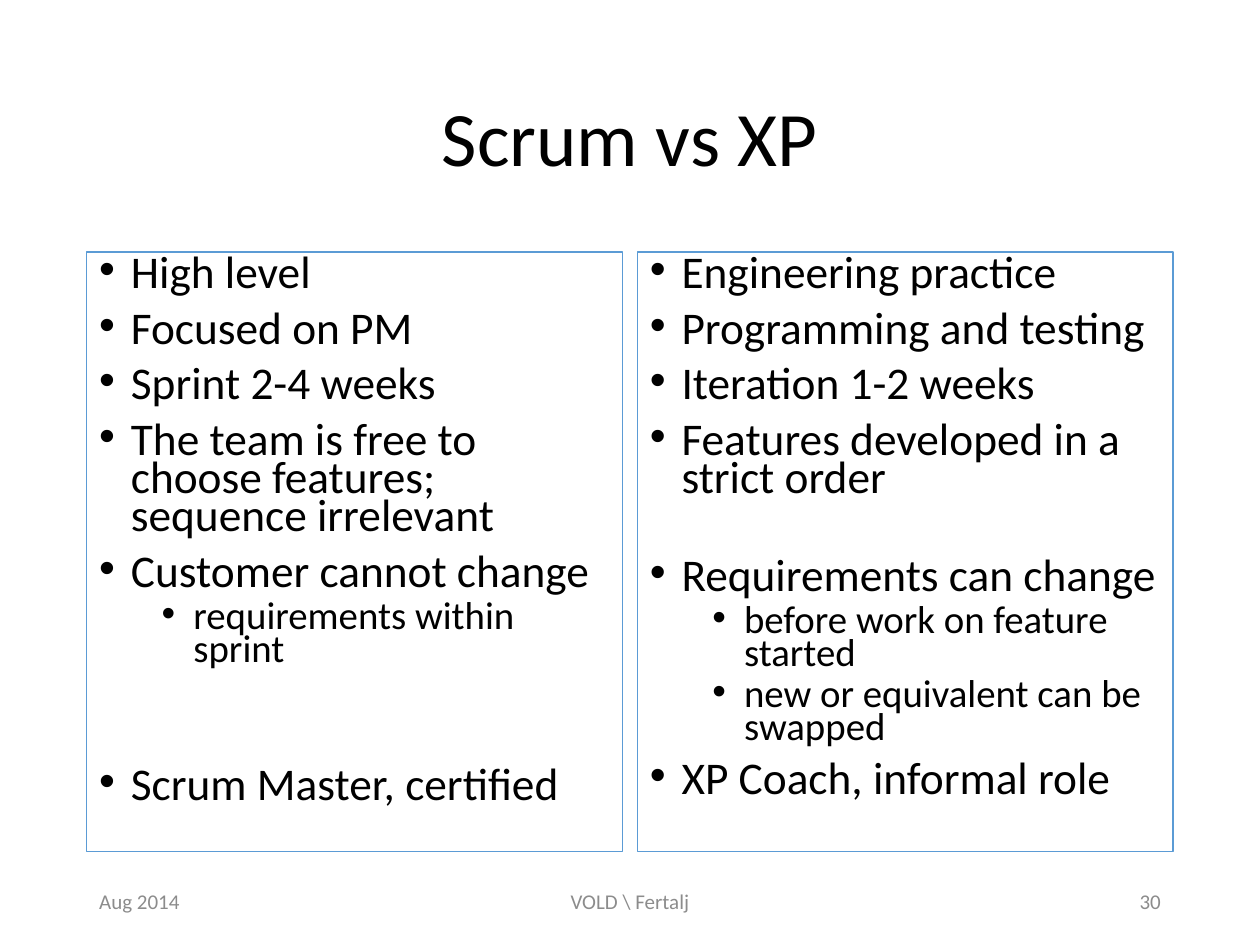
from dataclasses import dataclass

from lxml import etree
from pptx import Presentation
from pptx import util as u
from pptx.dml.color import RGBColor
from pptx.enum import shapes, text
from pptx.oxml import ns


@dataclass(frozen=True)
class Theme:
    font: str = "Calibri"
    ink: str = "000000"
    muted: str = "8C8C8C"
    border: str = "5B9BD5"
    title_size: float = 44
    footer_size: float = 12
    level_sizes: tuple = (25.9, 22.2)
    level_gaps: tuple = (10, 5)
    level_indents: tuple = (0.64, 1.9)
    hanging: float = 0.64


THEME = Theme()
LEFT, WIDTH = 1.75, 21.9
GUTTER = 0.3

# Each entry: level, wording, extra space above in points
SCRUM = [
    (0, "High level", 0),
    (0, "Focused on PM", 0),
    (0, "Sprint 2-4 weeks", 0),
    (0, "The team is free to choose features; sequence irrelevant", 0),
    (0, "Customer cannot change", 0),
    (1, "requirements within sprint", 0),
    (0, "Scrum Master, certified", 48),
]
XP = [
    (0, "Engineering practice", 0),
    (0, "Programming and testing", 0),
    (0, "Iteration 1-2 weeks", 0),
    (0, "Features developed in a strict order", 0),
    (0, "Requirements can change", 24),
    (1, "before work on feature started", 0),
    (1, "new or equivalent can be swapped", 0),
    (0, "XP Coach, informal role", 0),
]


def apply(target, formats):
    for name, value in formats.items():
        setattr(target, name, value)


def write(paragraph, wording, size, color, **formats):
    apply(paragraph, formats)
    run = paragraph.add_run()
    run.text = wording
    apply(run.font, {"name": THEME.font, "size": u.Pt(size)})
    run.font.color.rgb = RGBColor.from_string(color)


def add_bullet(paragraph, level):
    props = paragraph._p.get_or_add_pPr()
    props.set("marL", str(u.Cm(THEME.level_indents[level])))
    props.set("indent", str(-u.Cm(THEME.hanging)))
    font = etree.SubElement(props, ns.qn("a:buFont"))
    font.set("typeface", "Arial")
    etree.SubElement(props, ns.qn("a:buChar")).set("char", "•")


def place_title(slide, box, wording):
    title = slide.shapes.title
    apply(title, dict(zip(("left", "top", "width", "height"), map(u.Cm, box))))
    apply(title.text_frame, {
        "word_wrap": True,
        "auto_size": text.MSO_AUTO_SIZE.NONE,
        "vertical_anchor": text.MSO_ANCHOR.MIDDLE,
    })
    write(title.text_frame.paragraphs[0], wording, THEME.title_size, THEME.ink,
          alignment=text.PP_ALIGN.CENTER, line_spacing=0.9)


def place_method(slide, box, points):
    panel = slide.shapes.add_shape(shapes.MSO_SHAPE.RECTANGLE, *map(u.Cm, box))
    panel.shadow.inherit = False
    panel.fill.background()
    panel.line.color.rgb = RGBColor.from_string(THEME.border)
    panel.line.width = u.Pt(0.75)
    frame = panel.text_frame
    apply(frame, {"word_wrap": True, "vertical_anchor": text.MSO_ANCHOR.TOP})
    for index, (level, wording, extra) in enumerate(points):
        paragraph = frame.add_paragraph() if index else frame.paragraphs[0]
        write(paragraph, wording, THEME.level_sizes[level], THEME.ink,
              level=level, alignment=text.PP_ALIGN.LEFT, line_spacing=0.7,
              space_before=u.Pt(THEME.level_gaps[level] + extra))
        add_bullet(paragraph, level)


def place_footer(slide, box, date, author, number):
    left, top, width, height = box
    side, middle = 5.72, 8.58
    parts = [
        (date, left, side, text.PP_ALIGN.LEFT),
        (author, left + (width - middle) / 2, middle, text.PP_ALIGN.CENTER),
        (number, left + width - side, side, text.PP_ALIGN.RIGHT),
    ]
    for wording, part_left, part_width, alignment in parts:
        label = slide.shapes.add_textbox(
            *map(u.Cm, (part_left, top, part_width, height)))
        apply(label.text_frame, {
            "word_wrap": True,
            "vertical_anchor": text.MSO_ANCHOR.MIDDLE,
        })
        write(label.text_frame.paragraphs[0], wording, THEME.footer_size,
              THEME.muted, alignment=alignment)


def main():
    deck = Presentation()
    apply(deck, {"slide_width": u.Cm(25.4), "slide_height": u.Cm(19.05)})
    slide = deck.slides.add_slide(deck.slide_layouts.get_by_name("Title Only"))

    # Heading
    place_title(slide, (LEFT, 1.02, WIDTH, 3.68), "Scrum vs XP")

    # Two methods side by side
    column = (WIDTH - GUTTER) / 2
    for index, points in enumerate((SCRUM, XP)):
        left = LEFT + index * (column + GUTTER)
        place_method(slide, (left, 5.08, column, 12.09), points)

    # Date, author and slide number
    place_footer(slide, (LEFT, 17.65, WIDTH, 1.02),
                 "Aug 2014", "VOLD \\ Fertalj", "30")

    deck.save("out.pptx")


if __name__ == "__main__":
    main()
